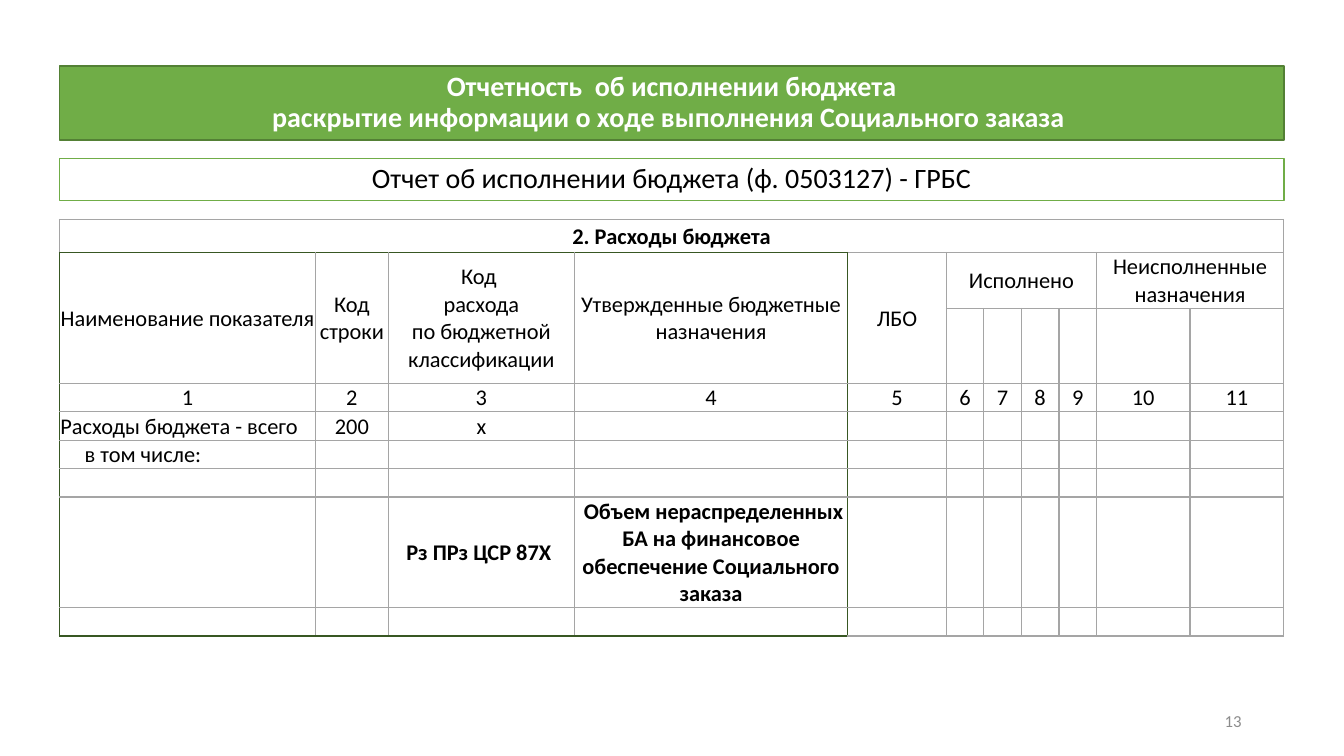
from lxml import etree
from pptx import Presentation
from pptx.dml.color import RGBColor
from pptx.enum.shapes import MSO_SHAPE
from pptx.enum.text import MSO_ANCHOR, MSO_AUTO_SIZE, PP_ALIGN
from pptx.oxml.ns import qn
from pptx.util import Pt

RECTANGLE = MSO_SHAPE.RECTANGLE
TOP, MIDDLE, BOTTOM = MSO_ANCHOR.TOP, MSO_ANCHOR.MIDDLE, MSO_ANCHOR.BOTTOM
LEFT, CENTER, RIGHT = PP_ALIGN.LEFT, PP_ALIGN.CENTER, PP_ALIGN.RIGHT
NO_FIT = MSO_AUTO_SIZE.NONE

WHITE = RGBColor(0xFF, 0xFF, 0xFF)
BLACK = RGBColor(0, 0, 0)
GREEN = RGBColor(0x70, 0xAD, 0x47)
TITLE_EDGE = RGBColor(0x53, 0x80, 0x35)
BOX_EDGE = RGBColor(0x38, 0x57, 0x23)
GRID = RGBColor(0xA5, 0xA5, 0xA5)
PAGE_GRAY = RGBColor(0x8C, 0x8C, 0x8C)

TITLE = "Отчетность  об исполнении бюджета\vраскрытие информации о ходе выполнения Социального заказа "
SUBTITLE = "Отчет об исполнении бюджета (ф. 0503127) - ГРБС"
PAGE_NUMBER = "13"

TABLE_ROWS = [
    ["2. Расходы бюджета"],
    ["Наименование показателя", "Код строки", "Код \vрасхода\vпо бюджетной классификации",
     "Утвержденные бюджетные назначения", "ЛБО", "Исполнено", "", "", "", "Неисполненные\vназначения"],
    [],
    [str(number) for number in range(1, 12)],
    ["Расходы бюджета - всего", "200", "х"],
    ["в том числе:"],
    [],
    ["", "", "Рз ПРз ЦСР 87Х\u00a0",
     "\u00a0Объем нераспределенных БА на финансовое обеспечение Социального заказа"],
    [],
]
MERGES = [((0, 0), (0, 10)), ((1, 5), (1, 8)), ((1, 9), (1, 10))]
MERGES += [((1, column), (2, column)) for column in range(5)]
COLUMN_WIDTHS = [183, 51.8, 133.2, 195, 70.6] + [26.8] * 4 + [66.9] * 2
ROW_HEIGHTS = [23.6, 40, 53.6] + [20.3] * 4 + [79, 20.3]
BOLD_ROWS = (0, 7)
NUMBER_ROW = 3
ANCHORS = {(4, 0): BOTTOM, (5, 0): BOTTOM, (7, 3): BOTTOM}
INDENTS = {(5, 0): 18}
BOX_TOP, BOX_BOTTOM, BOX_LEFT, BOX_RIGHT = 1, 8, 0, 3

MARGIN = 42.5
CONTENT_WIDTH = sum(COLUMN_WIDTHS)
TITLE_BOX = (MARGIN, 47.2, CONTENT_WIDTH, 52.7)
SUBTITLE_BOX = (MARGIN, 113.2, CONTENT_WIDTH, 30)
TABLE_BOX = (MARGIN, 156.7, CONTENT_WIDTH, sum(ROW_HEIGHTS))
PAGE_BOX = (678, 500.5, 216, 28.8)

TITLE_FONT = {"size": Pt(20), "bold": True, "name": "Calibri"}
SUBTITLE_FONT = {"size": Pt(20), "bold": False, "name": "Calibri"}
PAGE_FONT = {"size": Pt(12), "bold": False, "name": "Calibri"}
CELL_SIZE = 16


def set_attributes(target, values):
    for name, value in values.items():
        setattr(target, name, value)


def write_text(frame, text, font, color, alignment, paragraph_format):
    frame.text = text
    paragraph = frame.paragraphs[0]
    set_attributes(paragraph, {"alignment": alignment, **paragraph_format})
    for run in paragraph.runs:
        set_attributes(run.font, font)
        run.font.color.rgb = color


def place(shape, box):
    for name, value in zip(("left", "top", "width", "height"), box):
        setattr(shape, name, Pt(value))


def format_panel(shape, box, fill, edge):
    place(shape, box)
    shape.fill.solid()
    shape.fill.fore_color.rgb = fill
    shape.line.color.rgb = edge
    shape.line.width = Pt(1)
    set_attributes(shape.text_frame, {"word_wrap": True, "auto_size": NO_FIT, "vertical_anchor": MIDDLE})


def border_colors(row, column):
    in_rows = BOX_TOP <= row <= BOX_BOTTOM
    in_columns = BOX_LEFT <= column <= BOX_RIGHT
    dark = {
        "a:lnL": in_rows and column in (BOX_LEFT, BOX_RIGHT + 1),
        "a:lnR": in_rows and column == BOX_RIGHT,
        "a:lnT": in_columns and row == BOX_TOP,
        "a:lnB": in_columns and row in (BOX_TOP - 1, BOX_BOTTOM),
    }
    return {tag: BOX_EDGE if is_dark else GRID for tag, is_dark in dark.items()}


def draw_borders(cell, colors):
    properties = cell._tc.get_or_add_tcPr()
    for index, (tag, color) in enumerate(colors.items()):
        line = etree.Element(qn(tag), w=str(Pt(1)))
        fill = etree.SubElement(line, qn("a:solidFill"))
        etree.SubElement(fill, qn("a:srgbClr"), val=str(color))
        properties.insert(index, line)


def fill_cell(cell, row, column, text):
    cell.fill.background()
    set_attributes(cell, {
        "margin_left": Pt(INDENTS.get((row, column), 0.7)),
        "margin_right": Pt(0.7),
        "margin_top": Pt(0.7),
        "margin_bottom": Pt(0),
        "vertical_anchor": TOP if row == NUMBER_ROW else ANCHORS.get((row, column), MIDDLE),
    })
    draw_borders(cell, border_colors(row, column))
    if text:
        font = {"size": Pt(CELL_SIZE), "bold": row in BOLD_ROWS, "name": "Calibri"}
        alignment = LEFT if column == 0 and row > NUMBER_ROW else CENTER
        write_text(cell.text_frame, text, font, BLACK, alignment, {})
    else:
        paragraph = cell.text_frame.paragraphs[0]
        etree.SubElement(paragraph._p, qn("a:endParaRPr"), sz=str(CELL_SIZE * 100))


def build_table(slide):
    frame = slide.shapes.add_table(
        len(ROW_HEIGHTS), len(COLUMN_WIDTHS), *[Pt(value) for value in TABLE_BOX])
    table = frame.table
    set_attributes(table, {"first_row": False, "horz_banding": False})
    for column, width in zip(table.columns, COLUMN_WIDTHS):
        column.width = Pt(width)
    for row, height in zip(table.rows, ROW_HEIGHTS):
        row.height = Pt(height)
    for row, texts in enumerate(TABLE_ROWS):
        padded = texts + [""] * (len(COLUMN_WIDTHS) - len(texts))
        for column, text in enumerate(padded):
            fill_cell(table.cell(row, column), row, column, text)
    for first, last in MERGES:
        table.cell(*first).merge(table.cell(*last))


def main():
    presentation = Presentation()
    presentation.slide_width = Pt(960)
    presentation.slide_height = Pt(540)
    slide = presentation.slides.add_slide(presentation.slide_layouts[5])

    title = slide.shapes.title
    format_panel(title, TITLE_BOX, GREEN, TITLE_EDGE)
    write_text(title.text_frame, TITLE, TITLE_FONT, WHITE, CENTER, {"line_spacing": 0.9})

    subtitle = slide.shapes.add_shape(RECTANGLE, *[Pt(value) for value in SUBTITLE_BOX])
    subtitle.shadow.inherit = False
    format_panel(subtitle, SUBTITLE_BOX, WHITE, GREEN)
    write_text(subtitle.text_frame, SUBTITLE, SUBTITLE_FONT, BLACK, CENTER,
               {"line_spacing": 0.9, "space_before": Pt(10)})

    build_table(slide)

    page_number = slide.shapes.add_textbox(*[Pt(value) for value in PAGE_BOX])
    set_attributes(page_number.text_frame, {"word_wrap": True, "vertical_anchor": MIDDLE})
    write_text(page_number.text_frame, PAGE_NUMBER, PAGE_FONT, PAGE_GRAY, RIGHT, {})

    presentation.save("out.pptx")


if __name__ == "__main__":
    main()
